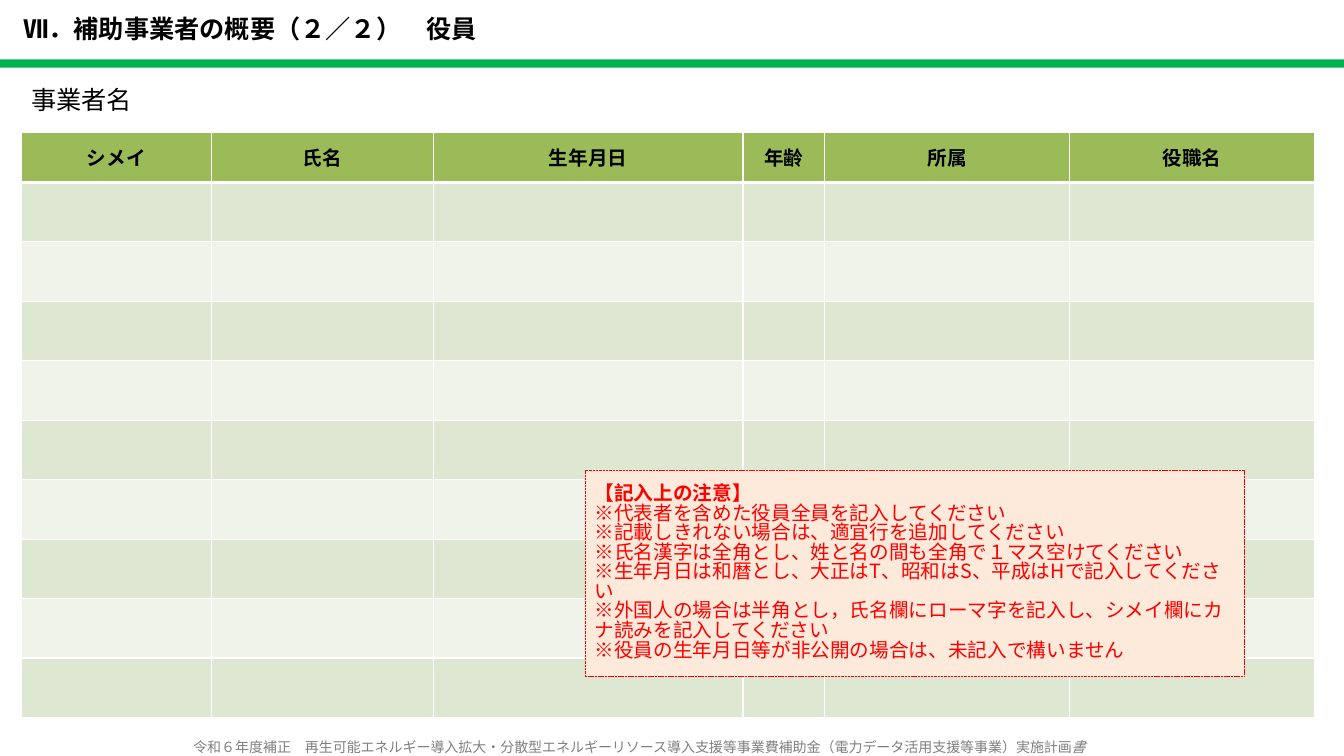
from lxml.etree import SubElement
from pptx import Presentation
from pptx.dml.color import RGBColor
from pptx.enum.dml import MSO_LINE_DASH_STYLE as Dash
from pptx.enum.shapes import MSO_SHAPE as Shape
from pptx.enum.text import MSO_ANCHOR as Anchor, MSO_AUTO_SIZE as AutoSize, PP_ALIGN as Align
from pptx.oxml.ns import qn
from pptx.util import Inches, Pt

FONT = "Noto Sans CJK JP"
HEADERS = ["シメイ", "氏名", "生年月日", "年齢", "所属", "役職名"]
COLUMN_WIDTHS = [1.89, 2.2, 3.07, 0.81, 2.43, 2.43]
HEADER_HEIGHT, ROW_HEIGHT, BLANK_ROWS = 0.5, 0.59, 9
HEADER_FILL, BAND_FILLS = "9BBB59", ["DEE7D1", "EFF3EA"]
NOTES = [
    "【記入上の注意】",
    "※代表者を含めた役員全員を記入してください",
    "※記載しきれない場合は、適宜行を追加してください",
    "※氏名漢字は全角とし、姓と名の間も全角で１マス空けてください",
    "※生年月日は和暦とし、大正はT、昭和はS、平成はHで記入してください",
    "※外国人の場合は半角とし，氏名欄にローマ字を記入し、シメイ欄にカナ読みを記入してください",
    "※役員の生年月日等が非公開の場合は、未記入で構いません",
]
FOOTER = ("令和６年度補正　再生可能エネルギー導入拡大・分散型エネルギーリソース導入支援等事業費補助金"
          "（電力データ活用支援等事業）実施計画")


def color(value):
    """Turn a hex string into a colour."""
    return RGBColor.from_string(value)


def paint(target, value):
    """Fill a shape, cell or line with one solid colour."""
    target.fill.solid()
    target.fill.fore_color.rgb = color(value)


def format_paragraph(paragraph, size, value="000000", bold=False, align=Align.LEFT):
    """Set the font and alignment of a paragraph."""
    paragraph.alignment = align
    font = paragraph.font
    font.size, font.bold, font.name = Pt(size), bold, FONT
    font.color.rgb = color(value)
    properties = paragraph._p.pPr.find(qn("a:defRPr"))
    SubElement(properties, qn("a:ea")).set("typeface", FONT)


def place(shape, left, top, width, height):
    """Move and size a shape, in inches."""
    shape.left, shape.top = Inches(left), Inches(top)
    shape.width, shape.height = Inches(width), Inches(height)


def write_line(shape, text, size, **style):
    """Write one vertically centred line of text and return its paragraph."""
    frame = shape.text_frame
    frame.word_wrap = True
    frame.auto_size = AutoSize.NONE
    frame.vertical_anchor = Anchor.MIDDLE
    frame.text = text
    paragraph = frame.paragraphs[0]
    format_paragraph(paragraph, size, **style)
    return paragraph


def add_label(slide, box, text, size, **style):
    """Add a text box with one line and return its paragraph."""
    label = slide.shapes.add_textbox(*map(Inches, box))
    return write_line(label, text, size, **style)


def add_rectangle(slide, box, fill):
    """Add a filled rectangle without outline or shadow."""
    rectangle = slide.shapes.add_shape(Shape.RECTANGLE, *map(Inches, box))
    rectangle.shadow.inherit = False
    paint(rectangle, fill)
    rectangle.line.fill.background()
    return rectangle


def set_borders(cell, top, bottom):
    """Draw white cell borders, with widths in points."""
    properties = cell._tc.get_or_add_tcPr()
    for side, width in {"lnL": 1, "lnR": 1, "lnT": top, "lnB": bottom}.items():
        line = SubElement(properties, qn(f"a:{side}"), w=str(Pt(width)))
        fill = SubElement(line, qn("a:solidFill"))
        SubElement(fill, qn("a:srgbClr"), val="FFFFFF")


def add_officer_table(slide):
    """Add the officer table with a header and blank banded rows."""
    height = HEADER_HEIGHT + BLANK_ROWS * ROW_HEIGHT
    box = (0.21, 1.31, sum(COLUMN_WIDTHS), height)
    table = slide.shapes.add_table(BLANK_ROWS + 1, len(HEADERS), *map(Inches, box)).table
    for column, width in zip(table.columns, COLUMN_WIDTHS):
        column.width = Inches(width)
    for index, row in enumerate(table.rows):
        row.height = Inches(ROW_HEIGHT if index else HEADER_HEIGHT)
        for cell in row.cells:
            set_borders(cell, 3 if index == 1 else 1, 1 if index else 3)
            paint(cell, BAND_FILLS[(index - 1) % 2] if index else HEADER_FILL)
    for cell, header in zip(table.rows[0].cells, HEADERS):
        cell.text = header
        cell.vertical_anchor = Anchor.MIDDLE
        format_paragraph(cell.text_frame.paragraphs[0], 14, bold=True, align=Align.CENTER)


def add_notes_box(slide):
    """Add the dashed box of entry instructions."""
    box = add_rectangle(slide, (5.8, 4.66, 6.54, 2.05), "FDEADA")
    paint(box.line, "FF0000")
    box.line.width = Pt(0.25)
    box.line.dash_style = Dash.SQUARE_DOT
    frame = box.text_frame
    frame.word_wrap = True
    frame.vertical_anchor = Anchor.MIDDLE
    frame.text = "\n".join(NOTES)
    for index, paragraph in enumerate(frame.paragraphs):
        format_paragraph(paragraph, 14, "FF0000", bold=index == 0)
        paragraph.line_spacing = 0.83


def main():
    """Build the slide and save it."""
    presentation = Presentation()
    presentation.slide_width, presentation.slide_height = Inches(13.33), Inches(7.5)
    slide = presentation.slides.add_slide(presentation.slide_layouts[5])
    title = slide.shapes.title
    place(title, 0.13, 0.06, 5.43, 0.45)
    write_line(title, "Ⅶ．補助事業者の概要（２／２）　役員", 18, bold=True)
    footer = add_label(slide, (0, 7.32, 12.68, 0.18), FOOTER, 10,
                       value="808080", align=Align.CENTER)
    last_character = footer.add_run()
    last_character.text = "書"
    last_character.font.italic = True
    add_rectangle(slide, (0, 0.59, 13.33, 0.08), "00B050")
    add_officer_table(slide)
    add_notes_box(slide)
    add_label(slide, (0.21, 0.76, 5.75, 0.45), "事業者名", 18)
    presentation.save("out.pptx")


if __name__ == "__main__":
    main()
